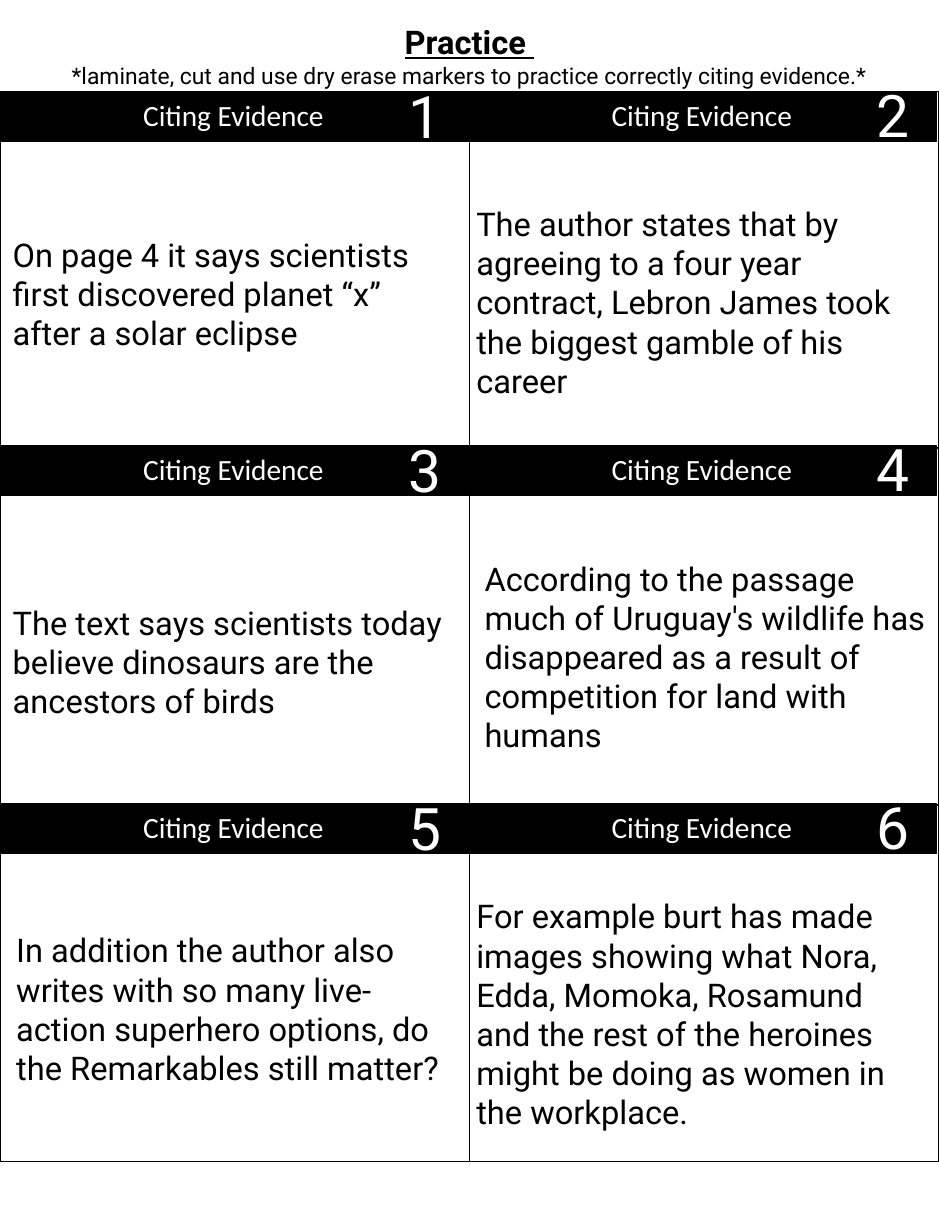
from dataclasses import dataclass

import pptx
import pptx.dml.color
import pptx.enum.shapes
import pptx.enum.text
import pptx.oxml
import pptx.oxml.ns
import pptx.util

BLACK = pptx.dml.color.RGBColor(0x00, 0x00, 0x00)
WHITE = pptx.dml.color.RGBColor(0xFF, 0xFF, 0xFF)
CENTER = pptx.enum.text.PP_ALIGN.CENTER
LEFT = pptx.enum.text.PP_ALIGN.LEFT

PAGE_WIDTH, PAGE_HEIGHT = 8, 10.5
COLUMNS, ROWS = 2, 3
COLUMN_WIDTH = PAGE_WIDTH / COLUMNS
ROW_HEIGHT = 3.04
GRID_TOP = 0.78
BANNER_TOPS = (GRID_TOP, 3.8, 6.85)
BANNER_WIDTH, BANNER_HEIGHT = 3.99, 0.42
STATEMENT_WIDTH = 3.97
LINE_HEIGHT, TEXT_PADDING = 0.33, 0.13


@dataclass(frozen=True)
class Card:
    statement: str
    lines: int
    inset: float
    drop: float


CARDS = (
    Card("On page 4 it says scientists first discovered planet “x” after a solar eclipse",
         3, 0.01, 1.17),
    Card("The author states that by agreeing to a four year contract, Lebron James took "
         "the biggest gamble of his career", 5, -0.04, 0.91),
    Card("The text says scientists today believe dinosaurs are the ancestors of birds",
         3, 0.01, 1.29),
    Card("According to the passage much of Uruguay's wildlife has disappeared as a result "
         "of competition for land with humans", 5, 0.03, 0.91),
    Card("In addition the author also writes with so many live-action superhero options, "
         "do the Remarkables still matter?", 4, 0.04, 1.03),
    Card("For example burt has made images showing what Nora, Edda, Momoka, Rosamund and "
         "the rest of the heroines might be doing as women in the workplace.",
         6, -0.04, 0.74),
)


def box(*lengths: float) -> list[int]:
    return [pptx.util.Inches(length) for length in lengths]


def write(paragraph, text: str, *, size: float, font: str = "Roboto", color=BLACK,
          align=LEFT, bold: bool = False, underline: bool = False) -> None:
    paragraph.alignment = align
    run = paragraph.add_run()
    run.text = text
    run.font.name = font
    run.font.size = pptx.util.Pt(size)
    run.font.color.rgb = color
    run.font.bold = bold
    run.font.underline = underline


def add_frame(slide, left: float, top: float, width: float, height: float):
    frame = slide.shapes.add_textbox(*box(left, top, width, height)).text_frame
    frame.word_wrap = True
    frame.auto_size = pptx.enum.text.MSO_AUTO_SIZE.SHAPE_TO_FIT_TEXT
    return frame


def outline_cell(cell) -> None:
    cell.fill.background()
    properties = cell._tc.get_or_add_tcPr()
    for position, side in enumerate(("lnL", "lnR", "lnT", "lnB")):
        border = pptx.oxml.parse_xml(
            f'<a:{side} {pptx.oxml.ns.nsdecls("a")} w="{pptx.util.Pt(1)}">'
            f'<a:solidFill><a:srgbClr val="{BLACK}"/></a:solidFill></a:{side}>')
        properties.insert(position, border)


def add_card_grid(slide) -> None:
    grid = slide.shapes.add_table(
        ROWS, COLUMNS, *box(0, GRID_TOP, PAGE_WIDTH, ROWS * ROW_HEIGHT)).table
    grid.first_row = False
    grid.horz_banding = False
    for column in grid.columns:
        column.width = pptx.util.Inches(COLUMN_WIDTH)
    for row in grid.rows:
        row.height = pptx.util.Inches(ROW_HEIGHT)
    for cell in grid.iter_cells():
        outline_cell(cell)


def add_heading(slide) -> None:
    heading = add_frame(slide, 0, 0.14, PAGE_WIDTH, 0.67)
    write(heading.paragraphs[0], "Practice ", size=20, align=CENTER,
          bold=True, underline=True)
    write(heading.add_paragraph(),
          "*laminate, cut and use dry erase markers to practice correctly citing evidence.*",
          size=14, align=CENTER)


def add_card(slide, index: int, card: Card) -> None:
    row, column = divmod(index, COLUMNS)
    top = BANNER_TOPS[row]
    left = column * BANNER_WIDTH

    banner = slide.shapes.add_shape(
        pptx.enum.shapes.MSO_SHAPE.RECTANGLE,
        *box(left, top, BANNER_WIDTH, BANNER_HEIGHT))
    banner.shadow.inherit = False
    banner.fill.solid()
    banner.fill.fore_color.rgb = BLACK
    banner.line.color.rgb = BLACK
    banner.line.width = pptx.util.Pt(1)

    label = add_frame(slide, left + 0.91, top, 2.16, BANNER_HEIGHT)
    write(label.paragraphs[0], "Citing Evidence", size=18, font="Calibri",
          color=WHITE, align=CENTER)

    number = add_frame(slide, left + 3.38, top - 0.15 - column * 0.01, 0.58, 0.71)
    write(number.paragraphs[0], str(index + 1), size=36, color=WHITE)

    statement = add_frame(slide, column * COLUMN_WIDTH + card.inset, top + card.drop,
                          STATEMENT_WIDTH, card.lines * LINE_HEIGHT + TEXT_PADDING)
    write(statement.paragraphs[0], card.statement, size=20)


def main() -> None:
    deck = pptx.Presentation()
    deck.slide_width, deck.slide_height = box(PAGE_WIDTH, PAGE_HEIGHT)
    slide = deck.slides.add_slide(deck.slide_layouts[6])
    add_card_grid(slide)
    add_heading(slide)
    for index, card in enumerate(CARDS):
        add_card(slide, index, card)
    deck.save("out.pptx")


if __name__ == "__main__":
    main()
